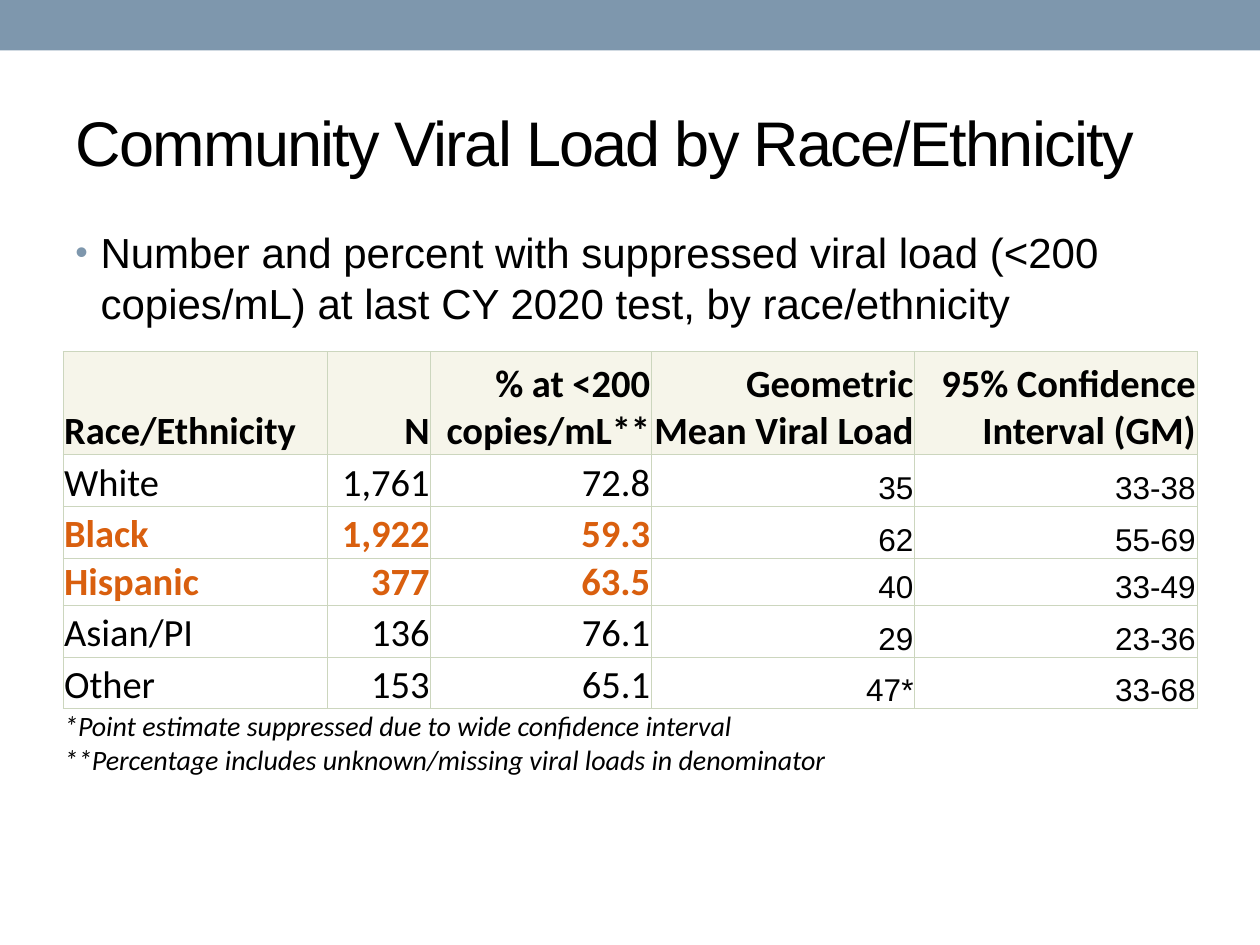
from lxml import etree
from pptx import Presentation
from pptx import util as u
from pptx.dml import color
from pptx.enum import shapes, text
from pptx.oxml import ns

Pt = u.Pt
COLORS = {"bar": "7E97AD", "text": "000000", "accent": "D95F0E",
          "header": "F6F5EA", "border": "CCD6BE"}
HEADERS = ["Race/Ethnicity", "N", "% at <200 copies/mL**",
           "Geometric Mean Viral Load", "95% Confidence Interval (GM)"]
ROWS = [
    ["White", "1,761", "72.8", "35", "33-38"],
    ["Black", "1,922", "59.3", "62", "55-69"],
    ["Hispanic", "377", "63.5", "40", "33-49"],
    ["Asian/PI", "136", "76.1", "29", "23-36"],
    ["Other", "153", "65.1", "47*", "33-68"],
]
HIGHLIGHTED = {"Black", "Hispanic"}
NOTES = ["*Point estimate suppressed due to wide confidence interval",
         "**Percentage includes unknown/missing viral loads in denominator"]
COL_WIDTHS = [151.2, 59, 126, 150.5, 161.3]
ROW_HEIGHTS = [59, 29.5, 29.5, 24, 29.5, 29.5, 29.5]


def rgb(name):
    """Return a named colour."""
    return color.RGBColor.from_string(COLORS[name])


def sub(parent, tag, **attrs):
    """Append a DrawingML child element."""
    return etree.SubElement(parent, ns.qn(tag), **attrs)


def set_font(p, size, name="Arial", fill="text", bold=False, italic=False):
    """Format a paragraph's font."""
    f = p.font
    f.size, f.name, f.bold, f.italic = Pt(size), name, bold, italic
    f.color.rgb = rgb(fill)


def add_bar(s, x, y, w, h):
    """Draw the band along the top."""
    sp = s.shapes.add_shape(shapes.MSO_SHAPE.RECTANGLE, Pt(x), Pt(y), Pt(w), Pt(h))
    sp.shadow.inherit = False
    sp.fill.solid()
    sp.fill.fore_color.rgb = rgb("bar")
    sp.line.fill.background()


def add_title(s, x, y, w, h):
    """Place and format the title placeholder."""
    sp = s.shapes.title
    sp.left, sp.top, sp.width, sp.height = Pt(x), Pt(y), Pt(w), Pt(h)
    tf = sp.text_frame
    tf.text = "Community Viral Load by Race/Ethnicity"
    tf.vertical_anchor = text.MSO_ANCHOR.MIDDLE
    p = tf.paragraphs[0]
    p.alignment = text.PP_ALIGN.LEFT
    set_font(p, 36)
    p.runs[0].font._element.set("spc", "-100")


def add_summary(s, x, y, w, h):
    """Add the bulleted description of the table."""
    tf = s.shapes.add_textbox(Pt(x), Pt(y), Pt(w), Pt(h)).text_frame
    tf.word_wrap = True
    p = tf.paragraphs[0]
    p.text = ("Number and percent with suppressed viral load (<200 copies/mL) "
              "at last CY 2020 test, by race/ethnicity")
    p.space_before = p.space_after = Pt(3)
    set_font(p, 24)
    pPr = p._p.get_or_add_pPr()
    indent = Pt(14.4)
    pPr.set("marL", str(indent))
    pPr.set("indent", str(-indent))
    bullet = etree.Element(ns.qn("a:buClr"))
    sub(bullet, "a:srgbClr", val=COLORS["bar"])
    at = pPr.index(pPr.find(ns.qn("a:defRPr")))
    pPr.insert(at, bullet)
    for tag, val in (("a:buChar", {"char": "•"}), ("a:buFont", {"typeface": "Arial"}),
                     ("a:buSzPct", {"val": "85000"})):
        pPr.insert(at + 1, etree.Element(ns.qn(tag), **val))


def set_borders(cell, visible):
    """Draw the named sides of a cell and clear the others."""
    tcPr = cell._tc.get_or_add_tcPr()
    for side in "LRTB":
        ln = sub(tcPr, f"a:ln{side}", w=str(Pt(0.5)))
        if side in visible:
            sub(sub(ln, "a:solidFill"), "a:srgbClr", val=COLORS["border"])
        else:
            sub(ln, "a:noFill")


def format_cell(cell, lines, borders, fill=None, align=text.PP_ALIGN.LEFT, **font):
    """Fill in one table cell."""
    set_borders(cell, borders)
    if fill:
        cell.fill.solid()
        cell.fill.fore_color.rgb = rgb(fill)
    else:
        cell.fill.background()
    cell.margin_left = cell.margin_right = cell.margin_top = Pt(0.7)
    cell.margin_bottom = 0
    cell.vertical_anchor = text.MSO_ANCHOR.BOTTOM
    cell.text = "\n".join(lines)
    for p in cell.text_frame.paragraphs:
        p.alignment = align
        set_font(p, **font)


def add_viral_load_table(s, x, y, w, h):
    """Add the table with its merged row of notes."""
    tbl = s.shapes.add_table(len(ROW_HEIGHTS), len(COL_WIDTHS),
                             Pt(x), Pt(y), Pt(w), Pt(h)).table
    tbl.first_row = tbl.horz_banding = False
    for col, width in zip(tbl.columns, COL_WIDTHS):
        col.width = Pt(width)
    for row, height in zip(tbl.rows, ROW_HEIGHTS):
        row.height = Pt(height)
    for i, values in enumerate([HEADERS] + ROWS):
        header, marked = i == 0, values[0] in HIGHLIGHTED
        for j, value in enumerate(values):
            if header or j < 3:
                font = dict(size=22, name="Calibri", bold=header or marked,
                            fill_font="accent" if marked else "text")
            else:
                font = dict(size=18, name="Arial", bold=False, fill_font="text")
            tint = font.pop("fill_font")
            cell = tbl.cell(i, j)
            format_cell(cell, [value], "LRTB", "header" if header else None,
                        text.PP_ALIGN.RIGHT if j else text.PP_ALIGN.LEFT, **font)
            cell.text_frame.paragraphs[0].font.color.rgb = rgb(tint)
    last = len(ROW_HEIGHTS) - 1
    tbl.cell(last, 0).merge(tbl.cell(last, len(COL_WIDTHS) - 1))
    for j in range(len(COL_WIDTHS)):
        format_cell(tbl.cell(last, j), [] if j else NOTES, "T",
                    size=16, name="Calibri", italic=True)


def main():
    """Build and save the slide."""
    prs = Presentation()
    prs.slide_width, prs.slide_height = Pt(720), Pt(540)
    s = prs.slides.add_slide(prs.slide_layouts[5])
    add_bar(s, 0, 0, 720, 28.8)
    add_title(s, 36, 41.8, 678, 77.8)
    add_summary(s, 36, 126, 648, 84.2)
    add_viral_load_table(s, 36, 200.9, 648, 242.6)
    prs.save("out.pptx")


if __name__ == "__main__":
    main()
